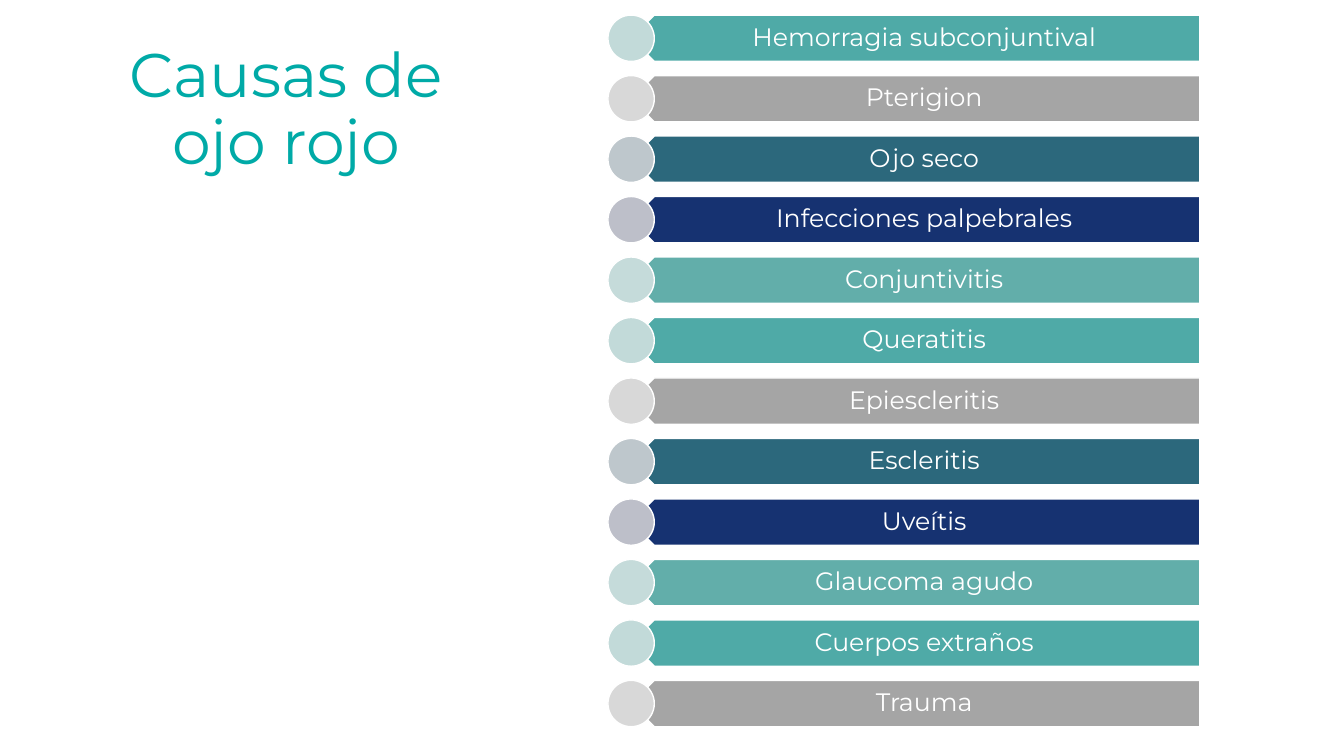
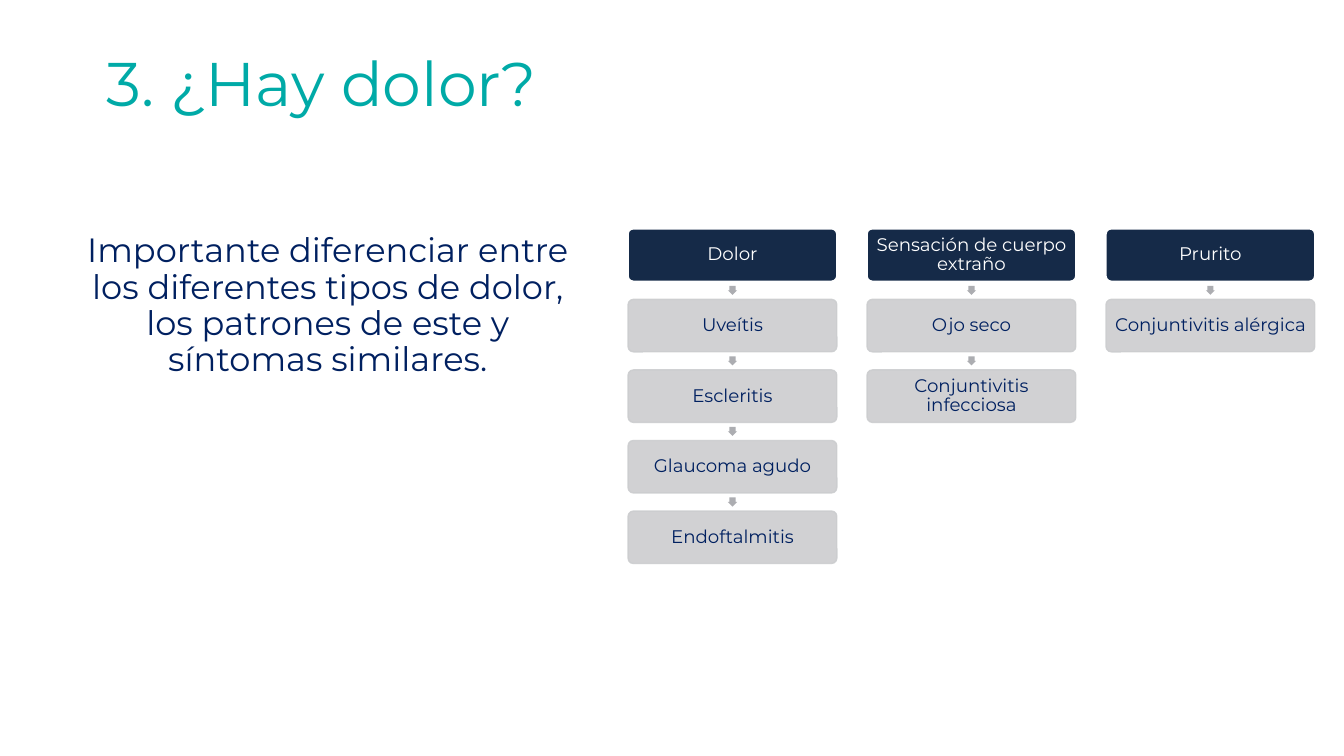
from itertools import cycle
from typing import NamedTuple

from lxml.etree import SubElement
from pptx import Presentation
from pptx.dml.color import RGBColor
from pptx.enum.shapes import MSO_SHAPE
from pptx.enum.text import MSO_ANCHOR, MSO_AUTO_SIZE, PP_ALIGN
from pptx.oxml.ns import qn
from pptx.presentation import Presentation as Deck
from pptx.shapes.autoshape import Shape
from pptx.slide import Slide
from pptx.util import Inches, Pt

FONT = "Montserrat"
TITLE_ONLY = 5

WHITE = RGBColor(0xFF, 0xFF, 0xFF)
TITLE_TEAL = RGBColor(0x00, 0xAA, 0xA7)
TEXT_NAVY = RGBColor(0x00, 0x20, 0x60)
HEADER_NAVY = RGBColor(0x15, 0x2A, 0x48)
BOX_GRAY = RGBColor(0xCC, 0xCD, 0xCF)
ARROW_GRAY = RGBColor(0xAC, 0xAD, 0xB1)


class Box(NamedTuple):
    """Left, top, width and height in inches."""
    left: float
    top: float
    width: float
    height: float


class BarColors(NamedTuple):
    bar: RGBColor
    circle: RGBColor


class PainColumn(NamedTuple):
    symptom: str
    causes: tuple[str, ...]


BAR_COLORS = (
    BarColors(RGBColor(0x4F, 0xAA, 0xA7), RGBColor(0xC2, 0xDA, 0xD9)),
    BarColors(RGBColor(0xA5, 0xA5, 0xA5), RGBColor(0xD8, 0xD8, 0xD8)),
    BarColors(RGBColor(0x2C, 0x68, 0x7C), RGBColor(0xBE, 0xC7, 0xCC)),
    BarColors(RGBColor(0x16, 0x32, 0x71), RGBColor(0xBD, 0xBF, 0xC9)),
    BarColors(RGBColor(0x62, 0xAE, 0xAA), RGBColor(0xC5, 0xDB, 0xDA)),
)

RED_EYE_CAUSES = (
    "Hemorragia subconjuntival", "Pterigion", "Ojo seco",
    "Infecciones palpebrales", "Conjuntivitis", "Queratitis",
    "Epiescleritis", "Escleritis", "Uveítis", "Glaucoma agudo",
    "Cuerpos extraños", "Trauma",
)

PAIN_COLUMNS = (
    PainColumn("Dolor", ("Uveítis", "Escleritis", "Glaucoma agudo", "Endoftalmitis")),
    PainColumn("Sensación de cuerpo extraño", ("Ojo seco", "Conjuntivitis infecciosa")),
    PainColumn("Prurito", ("Conjuntivitis alérgica",)),
)


def place(shape: Shape, box: Box) -> None:
    shape.left, shape.top, shape.width, shape.height = map(Inches, box)


def write_text(
    shape: Shape,
    text: str,
    *,
    size: float,
    color: RGBColor,
    align: PP_ALIGN = PP_ALIGN.CENTER,
    insets: tuple[float, float, float, float] = (0.1, 0.05, 0.1, 0.05),
) -> None:
    """Fill a shape with one vertically centred paragraph; insets are left, top, right, bottom."""
    frame = shape.text_frame
    frame.word_wrap = True
    frame.auto_size = MSO_AUTO_SIZE.NONE
    frame.vertical_anchor = MSO_ANCHOR.MIDDLE
    (frame.margin_left, frame.margin_top,
     frame.margin_right, frame.margin_bottom) = map(Inches, insets)
    paragraph = frame.paragraphs[0]
    paragraph.alignment = align
    paragraph.line_spacing = 0.9
    run = paragraph.add_run()
    run.text = text
    run.font.name = FONT
    run.font.size = Pt(size)
    run.font.color.rgb = color


def add_titled_slide(deck: Deck, title: str, box: Box, align: PP_ALIGN) -> Slide:
    slide = deck.slides.add_slide(deck.slide_layouts[TITLE_ONLY])
    place(slide.shapes.title, box)
    write_text(slide.shapes.title, title, size=44, color=TITLE_TEAL, align=align)
    return slide


def add_filled_shape(
    slide: Slide, kind: MSO_SHAPE, box: Box, fill: RGBColor, line: RGBColor | None = None
) -> Shape:
    shape = slide.shapes.add_shape(kind, *map(Inches, box))
    shape.shadow.inherit = False
    shape.fill.solid()
    shape.fill.fore_color.rgb = fill
    if line is None:
        shape.line.fill.background()
    else:
        shape.line.color.rgb = line
        shape.line.width = Pt(1)
    return shape


def set_opacity(shape: Shape, percent: int) -> None:
    """Apply the opacity to both fill and outline."""
    for color in shape._element.spPr.iter(qn("a:srgbClr")):
        SubElement(color, qn("a:alpha")).set("val", str(percent * 1000))


def add_cause_bar(slide: Slide, cause: str, top: float, colors: BarColors) -> None:
    height = 0.46
    bar = add_filled_shape(
        slide, MSO_SHAPE.PENTAGON, Box(6.26, top, 5.64, height), colors.bar, WHITE
    )
    bar._element.spPr.find(qn("a:xfrm")).set("flipH", "1")
    write_text(bar, cause, size=18, color=WHITE, insets=(0.2, 0.07, 0.14, 0.07))
    add_filled_shape(
        slide, MSO_SHAPE.OVAL, Box(6.03, top, height, height), colors.circle, WHITE
    )


def add_pain_column(slide: Slide, column: PainColumn, left: float) -> None:
    """Stack the symptom and its causes, with a small arrow in each gap."""
    first_top, pitch, width, height, arrow_side = 2.27, 0.7, 2.07, 0.52, 0.09
    for row, label in enumerate((column.symptom, *column.causes)):
        top = first_top + row * pitch
        is_header = row == 0
        if not is_header:
            arrow_box = Box(
                left + (width - arrow_side) / 2,
                top - (pitch - height + arrow_side) / 2,
                arrow_side,
                arrow_side,
            )
            arrow = add_filled_shape(slide, MSO_SHAPE.DOWN_ARROW, arrow_box, ARROW_GRAY)
            arrow.adjustments[0] = 0.67
        cell = add_filled_shape(
            slide,
            MSO_SHAPE.ROUNDED_RECTANGLE,
            Box(left, top, width, height),
            HEADER_NAVY if is_header else BOX_GRAY,
            WHITE if is_header else BOX_GRAY,
        )
        cell.adjustments[0] = 0.1
        if not is_header:
            set_opacity(cell, 90)
        write_text(
            cell,
            label,
            size=13,
            color=WHITE if is_header else TEXT_NAVY,
            insets=(0.02, 0.02, 0.02, 0.02),
        )


def build_causes_slide(deck: Deck) -> None:
    slide = add_titled_slide(
        deck, "Causas de ojo rojo", Box(0.67, 0, 4.34, 2.2), PP_ALIGN.CENTER
    )
    for row, (cause, colors) in enumerate(zip(RED_EYE_CAUSES, cycle(BAR_COLORS))):
        add_cause_bar(slide, cause, 0.15 + row * 0.6, colors)


def build_pain_slide(deck: Deck) -> None:
    slide = add_titled_slide(
        deck, "3. ¿Hay dolor?", Box(0.96, 0.13, 12.25, 1.45), PP_ALIGN.LEFT
    )
    advice = slide.shapes.add_textbox(*map(Inches, Box(0.74, 1.47, 5.02, 3.14)))
    write_text(
        advice,
        "Importante diferenciar entre los diferentes tipos de dolor, "
        "los patrones de este y síntomas similares.",
        size=24,
        color=TEXT_NAVY,
    )
    for index, column in enumerate(PAIN_COLUMNS):
        add_pain_column(slide, column, 6.23 + index * 2.37)


def main() -> None:
    deck = Presentation()
    deck.slide_width, deck.slide_height = Inches(13.33), Inches(7.5)
    build_causes_slide(deck)
    build_pain_slide(deck)
    deck.save("out.pptx")


if __name__ == "__main__":
    main()
